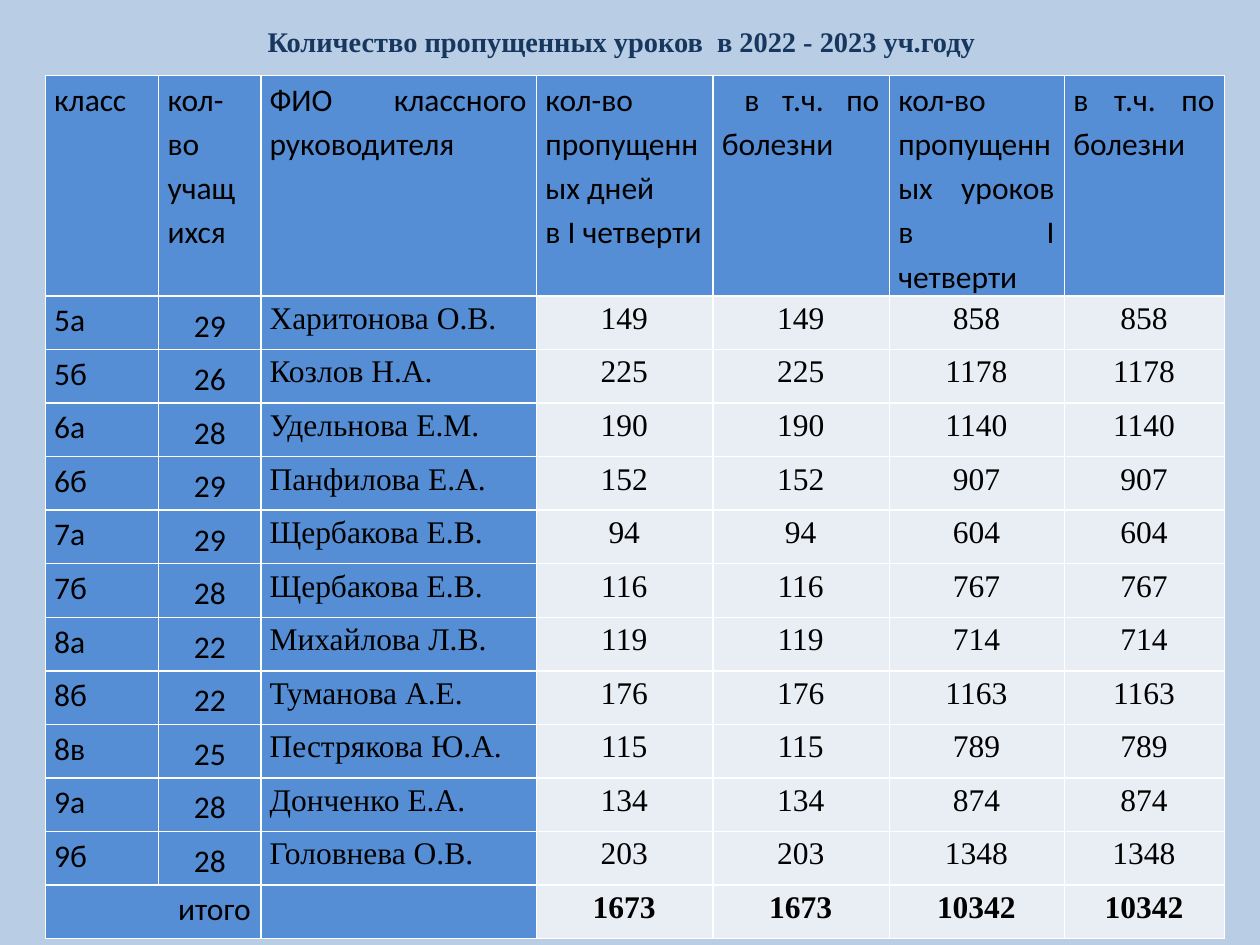
"""Build a slide with a table of missed lessons by class."""
from lxml import etree
from pptx import Presentation
from pptx.dml.color import RGBColor
from pptx.enum.text import MSO_ANCHOR, PP_ALIGN
from pptx.oxml.ns import qn
from pptx.util import Inches, Pt

SKY = RGBColor(0xB9, 0xCD, 0xE5)
NAVY = RGBColor(0x17, 0x37, 0x5E)
BLUE = RGBColor(0x55, 0x8E, 0xD5)
PALE = RGBColor(0xE9, 0xED, 0xF4)
WHITE = RGBColor(0xFF, 0xFF, 0xFF)
BLACK = RGBColor(0, 0, 0)
SERIF, SANS = "Times New Roman", "Calibri"

HEADINGS = [
    "класс", "кол-во учащихся", "ФИО классного руководителя",
    "кол-во пропущенных дней\nв I четверти", " в т.ч. по болезни",
    "кол-во пропущенных уроков в I четверти", "в т.ч. по болезни ",
]
CLASSES = [
    ("5а", 29, "Харитонова О.В.", 149, 858),
    ("5б", 26, "Козлов Н.А.", 225, 1178),
    ("6а", 28, "Удельнова Е.М.", 190, 1140),
    ("6б", 29, "Панфилова Е.А.", 152, 907),
    ("7а", 29, "Щербакова Е.В.", 94, 604),
    ("7б", 28, "Щербакова Е.В.", 116, 767),
    ("8а", 22, "Михайлова Л.В.", 119, 714),
    ("8б", 22, "Туманова А.Е.", 176, 1163),
    ("8в", 25, "Пестрякова Ю.А.", 115, 789),
    ("9а", 28, "Донченко Е.А.", 134, 874),
    ("9б", 28, "Головнева О.В.", 203, 1348),
    ("итого", "", "", 1673, 10342),
]
WIDTHS = [0.9, 0.81, 2.19, 1.4, 1.4, 1.39, 1.27]
HEADER_HEIGHT, TABLE_HEIGHT = 1.75, 6.85
ROW_HEIGHT = (TABLE_HEIGHT - HEADER_HEIGHT) / len(CLASSES)


def style_run(run, font, size, color, bold=False):
    run.font.name = font
    run.font.size = Pt(size)
    run.font.color.rgb = color
    run.font.bold = bold


def add_borders(cell):
    properties = cell._tc.get_or_add_tcPr()
    for index, side in enumerate(("a:lnL", "a:lnR", "a:lnT", "a:lnB")):
        line = etree.Element(qn(side), w=str(Pt(1)))
        fill = etree.SubElement(line, qn("a:solidFill"))
        etree.SubElement(fill, qn("a:srgbClr"), val=str(WHITE))
        properties.insert(index, line)


prs = Presentation()
prs.slide_width, prs.slide_height = Inches(10), Inches(7.5)
slide = prs.slides.add_slide(prs.slide_layouts[6])
slide.background.fill.solid()
slide.background.fill.fore_color.rgb = SKY

title = slide.shapes.add_textbox(Inches(0.43), Inches(0.21), Inches(9), Inches(0.24)).text_frame
title.word_wrap = True
title.vertical_anchor = MSO_ANCHOR.MIDDLE
title.margin_top = title.margin_bottom = 0
title.text = "Количество пропущенных уроков  в 2022 - 2023 уч.году"
title.paragraphs[0].alignment = PP_ALIGN.CENTER
style_run(title.paragraphs[0].runs[0], SERIF, 16.2, NAVY, True)

rows = [HEADINGS] + [
    [name, pupils, teacher, days, days, lessons, lessons]
    for name, pupils, teacher, days, lessons in CLASSES
]
total_row = len(rows) - 1
table = slide.shapes.add_table(
    len(rows), len(WIDTHS), Inches(0.36), Inches(0.6), Inches(sum(WIDTHS)),
    Inches(TABLE_HEIGHT)).table
table.first_row = table.horz_banding = False
for column, width in zip(table.columns, WIDTHS):
    column.width = Inches(width)
for r, row in enumerate(table.rows):
    row.height = Inches(ROW_HEIGHT if r else HEADER_HEIGHT)
table.cell(total_row, 0).merge(table.cell(total_row, 1))

for r, values in enumerate(rows):
    for c, value in enumerate(values):
        cell = table.cell(r, c)
        cell.fill.solid()
        cell.fill.fore_color.rgb = PALE if r and c > 2 else BLUE
        add_borders(cell)
        pupil_count = c == 1 and 0 < r < total_row
        cell.margin_left = Inches(0.01 if pupil_count else 0.07)
        cell.margin_right = Inches(0.01 if pupil_count else 0.08)
        cell.margin_top = Inches(0.01 if pupil_count else 0)
        cell.margin_bottom = 0
        if pupil_count:
            cell.vertical_anchor = MSO_ANCHOR.MIDDLE
        if value == "":
            continue
        if r and (c > 2 or pupil_count):
            alignment = PP_ALIGN.CENTER
        elif r == total_row:
            alignment = PP_ALIGN.RIGHT
        else:
            alignment = PP_ALIGN.JUSTIFY
        cell.text_frame.text = str(value)
        for paragraph in cell.text_frame.paragraphs:
            paragraph.alignment = alignment
            paragraph.line_spacing = 1.15
            for run in paragraph.runs:
                style_run(run, SERIF if r and c > 1 else SANS, 18, BLACK,
                          r == total_row and c > 2)

prs.save("out.pptx")
